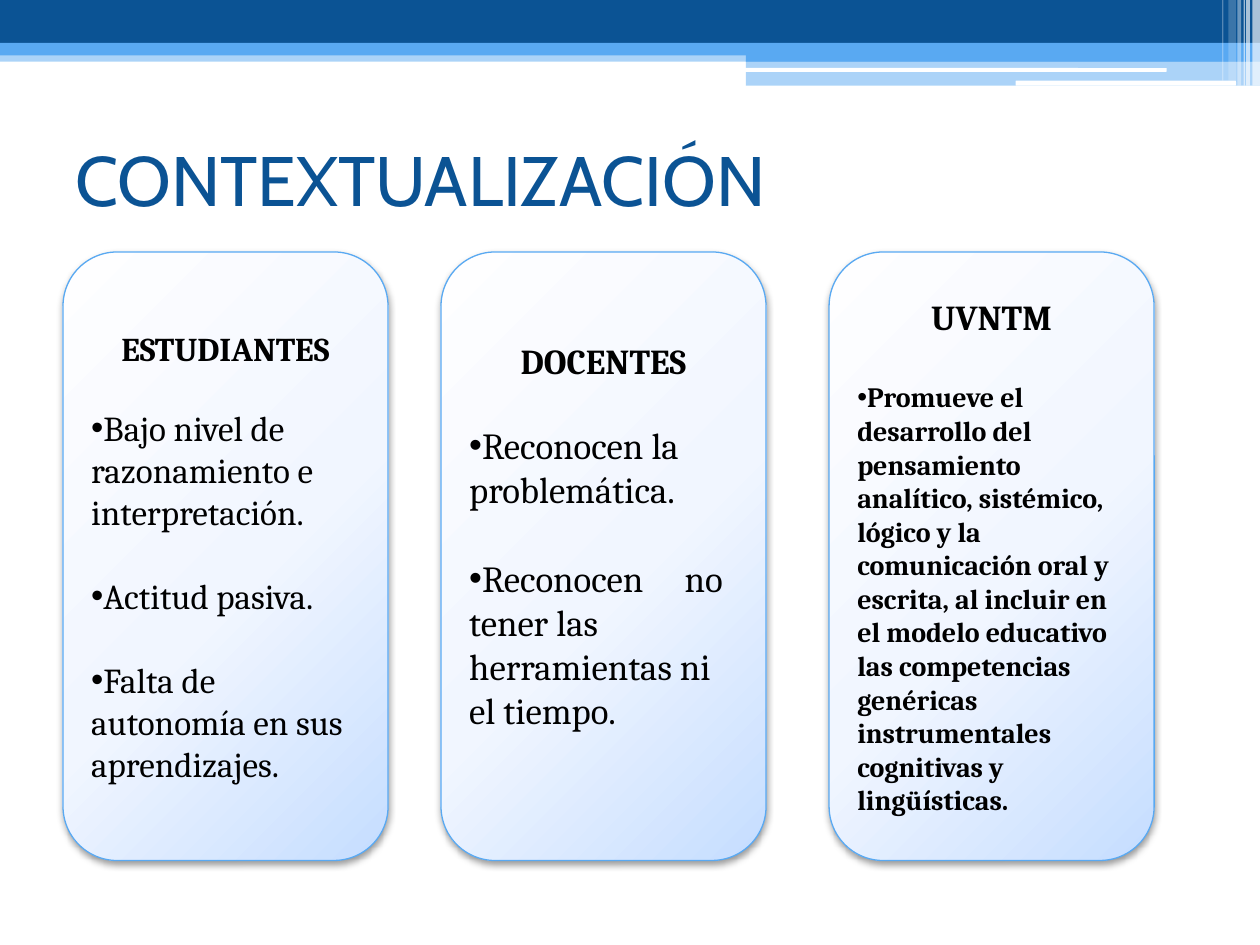
from typing import NamedTuple

from lxml import etree
from pptx import Presentation
from pptx.dml.color import RGBColor
from pptx.enum.shapes import MSO_SHAPE as Shape
from pptx.enum.text import MSO_ANCHOR as Anchor, PP_ALIGN as Align
from pptx.oxml import parse_xml
from pptx.oxml.ns import nsdecls, qn
from pptx.util import Inches, Pt

NAVY, SKY, WHITE, BLACK = "0B5394", "59A9F2", "FFFFFF", "000000"
LINE_HEIGHT = 1.2
CARD_TOP, CARD_WIDTH, CARD_HEIGHT = 2, 2.58, 4.83
TAB_STOP = 1.71


class Bar(NamedTuple):
    left: float
    top: float
    width: float
    height: float
    color: str
    opacity: int = 100
    geometry: Shape = Shape.RECTANGLE


class Card(NamedTuple):
    left: float
    heading: str
    heading_size: int
    heading_gap: int
    points: list[str]
    point_size: int
    bold_points: bool = False
    bottom_inset: float = 0.05


BARS = [
    Bar(0, 0.4, 10, 0.09, SKY, 50),
    Bar(0, 0, 10, 0.34, NAVY),
    Bar(0, 0.34, 10, 0.1, SKY),
    Bar(5.92, 0.39, 4.08, 0.1, SKY),
    Bar(5.92, 0.48, 4.08, 0.2, SKY, 50),
    Bar(5.91, 0.54, 3.35, 0.03, WHITE, geometry=Shape.ROUNDED_RECTANGLE),
    Bar(8.06, 0.64, 1.75, 0.04, WHITE, geometry=Shape.ROUNDED_RECTANGLE),
    Bar(9.94, 0, 0.06, 0.68, WHITE, 65),
    Bar(9.89, 0, 0.03, 0.68, WHITE, 65),
    Bar(9.87, 0, 0.01, 0.68, WHITE, 60),
    Bar(9.82, 0, 0.03, 0.68, WHITE, 40),
    Bar(9.75, 0, 0.06, 0.64, WHITE, 20),
    Bar(9.7, 0, 0.01, 0.64, WHITE, 30),
]

CARDS = [
    Card(0.5, "ESTUDIANTES", 19, 18, [
        "Bajo nivel de razonamiento e interpretación.",
        "Actitud pasiva.",
        "Falta de autonomía en sus aprendizajes.",
    ], 20),
    Card(3.5, "DOCENTES", 20, 20, [
        "Reconocen la problemática.",
        "Reconocen\tno tener las herramientas ni el tiempo.",
    ], 21, bottom_inset=0.38),
    Card(6.58, "UVNTM", 20, 20, [
        "Promueve el desarrollo del pensamiento analítico, sistémico, lógico y la "
        "comunicación oral y escrita, al incluir en el modelo educativo las "
        "competencias genéricas instrumentales cognitivas y lingüísticas.",
    ], 16, bold_points=True),
]


def rgb(color: str) -> RGBColor:
    return RGBColor.from_string(color)


def write(paragraph, text: str, *, size: int, font: str = "Cambria",
          color: str = BLACK, bold: bool = False, align: Align = Align.LEFT,
          gap: float = 0, bullet: bool = False) -> None:
    """Fill a paragraph; gap is the space before it, in points."""
    paragraph.alignment = align
    paragraph.space_before = Pt(gap)
    run = paragraph.add_run()
    run.text = text
    run.font.name = font
    run.font.size = Pt(size)
    run.font.bold = bold
    run.font.color.rgb = rgb(color)
    properties = paragraph._p.get_or_add_pPr()
    if bullet:
        etree.SubElement(properties, qn("a:buFont"), typeface="Arial")
        etree.SubElement(properties, qn("a:buChar"), char="•")
    if "\t" in text:
        tabs = etree.SubElement(properties, qn("a:tabLst"))
        etree.SubElement(tabs, qn("a:tab"), pos=str(Inches(TAB_STOP)), algn="l")


def add_bar(slide, bar: Bar) -> None:
    shape = slide.shapes.add_shape(
        bar.geometry, Inches(bar.left), Inches(bar.top),
        Inches(bar.width), Inches(bar.height))
    shape.shadow.inherit = False
    shape.line.fill.background()
    shape.fill.solid()
    shape.fill.fore_color.rgb = rgb(bar.color)
    if bar.opacity < 100:
        fill_color = shape._element.spPr.find(".//" + qn("a:srgbClr"))
        etree.SubElement(fill_color, qn("a:alpha"), val=str(bar.opacity * 1000))


def style_card(shape) -> None:
    """Give a card its outline, radial gradient and soft shadow."""
    shape.line.color.rgb = rgb(SKY)
    shape.line.width = Pt(0.75)
    shape.shadow.inherit = False
    properties = shape._element.spPr
    stops = "".join(
        f'<a:gs pos="{position * 1000}"><a:srgbClr val="{color}"/></a:gs>'
        for position, color in [(0, "FEFEFF"), (55, "F1F6FF"), (100, "C5DDFF")])
    properties.find(qn("a:ln")).addprevious(parse_xml(
        f'<a:gradFill {nsdecls("a")} rotWithShape="1"><a:gsLst>{stops}</a:gsLst>'
        '<a:path path="circle"><a:fillToRect l="-40000" t="-90000" '
        'r="140000" b="190000"/></a:path></a:gradFill>'))
    properties.find(qn("a:effectLst")).append(parse_xml(
        f'<a:outerShdw {nsdecls("a")} blurRad="{Pt(4.1)}" dist="{Pt(2)}" '
        f'dir="5400000" rotWithShape="0"><a:srgbClr val="{BLACK}">'
        '<a:alpha val="40000"/></a:srgbClr></a:outerShdw>'))


def add_card(slide, card: Card) -> None:
    shape = slide.shapes.add_shape(
        Shape.ROUNDED_RECTANGLE, Inches(card.left), Inches(CARD_TOP),
        Inches(CARD_WIDTH), Inches(CARD_HEIGHT))
    style_card(shape)
    frame = shape.text_frame
    frame.word_wrap = True
    frame.vertical_anchor = Anchor.MIDDLE
    frame.margin_bottom = Inches(card.bottom_inset)
    write(frame.paragraphs[0], card.heading, size=card.heading_size,
          bold=True, align=Align.CENTER)
    for index, point in enumerate(card.points):
        gap = card.point_size if index else card.heading_gap
        write(frame.add_paragraph(), point, size=card.point_size,
              bold=card.bold_points, gap=gap * LINE_HEIGHT, bullet=True)


def add_title(slide, text: str) -> None:
    box = slide.shapes.add_textbox(Inches(0.5), Inches(0.83), Inches(9), Inches(1.17))
    frame = box.text_frame
    frame.word_wrap = True
    frame.vertical_anchor = Anchor.MIDDLE
    write(frame.paragraphs[0], text, size=40, font="Cabin", color=NAVY)


def main() -> None:
    deck = Presentation()
    deck.slide_width, deck.slide_height = Inches(10), Inches(7.5)
    slide = deck.slides.add_slide(deck.slide_layouts[6])
    for bar in BARS:
        add_bar(slide, bar)
    add_title(slide, "CONTEXTUALIZACIÓN")
    for card in CARDS:
        add_card(slide, card)
    deck.save("out.pptx")


if __name__ == "__main__":
    main()
